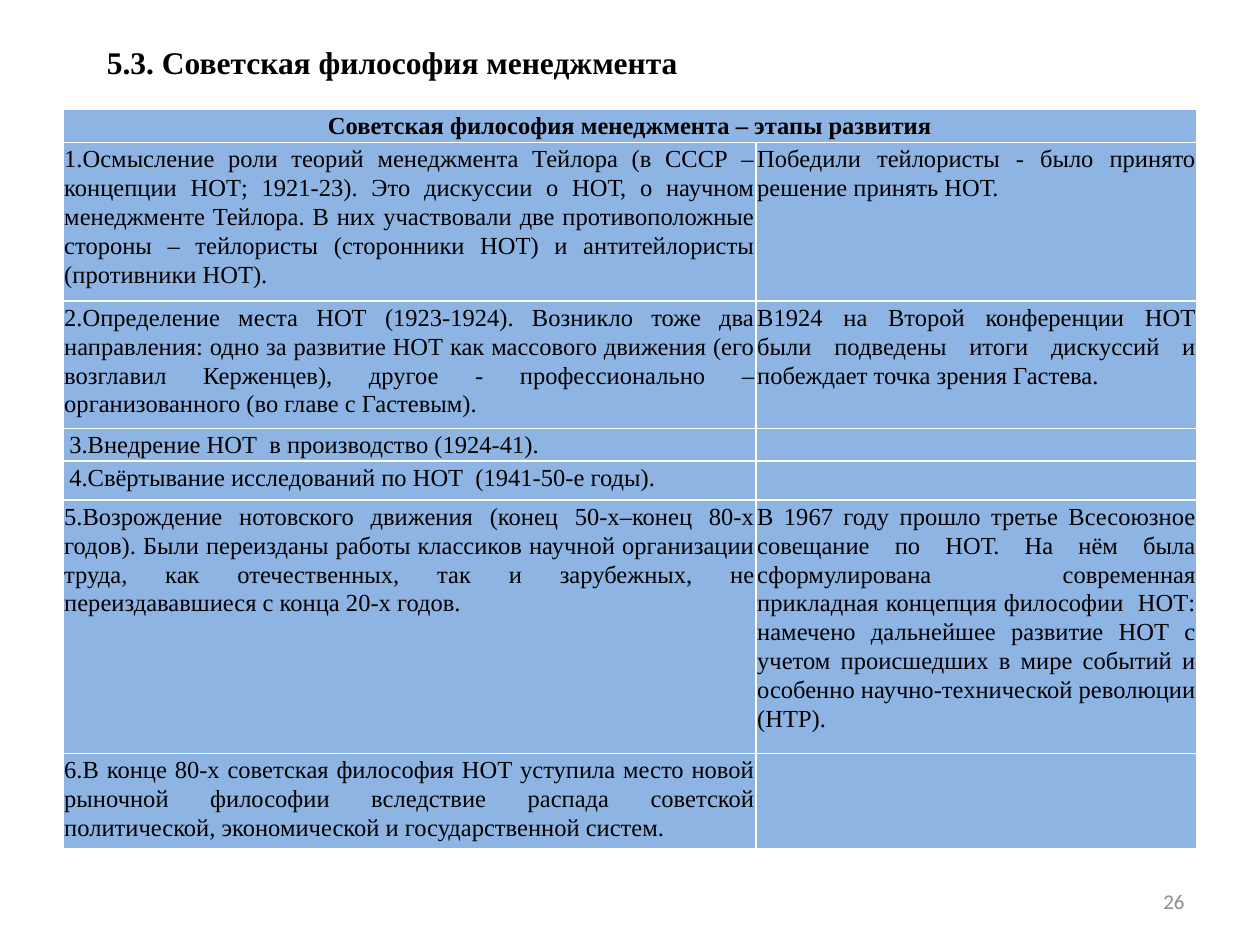
import dataclasses
import lxml.etree
import pptx
import pptx.dml.color
import pptx.enum.text
import pptx.oxml.ns
import pptx.util

ALIGN = pptx.enum.text.PP_ALIGN
ANCHOR = pptx.enum.text.MSO_ANCHOR
WIDE, HIGH = 10, 7.5
SERIF = "Times New Roman"
BLUE, WHITE, BLACK, GREY = "8EB4E3", "FFFFFF", "000000", "8C8C8C"
COLS = (0.55, 0.35)


@dataclasses.dataclass
class Style:
    """Look of one run of text."""
    size: float
    face: str = SERIF
    hue: str = BLACK
    bold: bool = False


@dataclasses.dataclass
class Stage:
    """One table row: its height, cell texts and alignment."""
    high: float
    left: str
    right: str = ""
    align: ALIGN = ALIGN.JUSTIFY
    pad: float = 0.01
    bold: bool = False


STAGES = (
    Stage(0.25, "Советская философия менеджмента – этапы развития",
          align=ALIGN.CENTER, pad=0.05, bold=True),
    Stage(1.26, "1.Осмысление роли теорий менеджмента Тейлора (в СССР – концепции НОТ; "
          "1921-23). Это дискуссии о НОТ, о научном менеджменте Тейлора. В них участвовали "
          "две противоположные стороны – тейлористы (сторонники НОТ) и антитейлористы "
          "(противники НОТ).",
          "Победили тейлористы - было принято решение принять НОТ."),
    Stage(1.01, "2.Определение места НОТ (1923-1924). Возникло тоже два направления: одно за "
          "развитие НОТ как массового движения (его возглавил Керженцев), другое - "
          "профессионально – организованного (во главе с Гастевым).",
          "В1924 на Второй конференции НОТ были подведены итоги дискуссий и побеждает точка "
          "зрения Гастева."),
    Stage(0.26, "3.Внедрение НОТ  в производство (1924-41).", align=ALIGN.LEFT, pad=0.05),
    Stage(0.31, "4.Свёртывание исследований по НОТ  (1941-50-е годы).",
          align=ALIGN.LEFT, pad=0.05),
    Stage(2.01, "5.Возрождение нотовского движения (конец 50-х–конец 80-х годов). Были "
          "переизданы работы классиков научной организации труда, как отечественных, так и "
          "зарубежных, не переиздававшиеся с конца 20-х годов.",
          "В 1967 году прошло третье Всесоюзное совещание по НОТ. На нём была сформулирована "
          "современная прикладная концепция философии  НОТ: намечено дальнейшее развитие НОТ "
          "с учетом происшедших в мире событий и особенно научно-технической революции (НТР)."),
    Stage(0.76, "6.В конце 80-х советская философия НОТ уступила место новой рыночной "
          "философии вследствие распада советской политической, экономической и "
          "государственной систем."),
)


def color(hue: str) -> pptx.dml.color.RGBColor:
    """Turn a hex string into a colour."""
    return pptx.dml.color.RGBColor.from_string(hue)


def write(para, text: str, style: Style, align: ALIGN) -> None:
    """Add one styled run to a paragraph."""
    para.alignment = align
    run = para.add_run()
    run.text = text
    run.font.size = pptx.util.Pt(style.size)
    run.font.name = style.face
    run.font.bold = style.bold
    run.font.color.rgb = color(style.hue)


def label(slide, box: tuple, text: str, style: Style, align: ALIGN, anchor: ANCHOR) -> None:
    """Place a text box given as shares of the slide."""
    left, top, wide, high = box
    shape = slide.shapes.add_textbox(
        pptx.util.Inches(left * WIDE), pptx.util.Inches(top * HIGH),
        pptx.util.Inches(wide * WIDE), pptx.util.Inches(high * HIGH))
    frame = shape.text_frame
    frame.word_wrap = True
    frame.vertical_anchor = anchor
    write(frame.paragraphs[0], text, style, align)


def border(cell) -> None:
    """Draw thin white lines on all sides of a cell."""
    props = cell._tc.get_or_add_tcPr()
    name = pptx.oxml.ns.qn
    for side in "LRTB":
        line = lxml.etree.SubElement(props, name(f"a:ln{side}"), w=str(pptx.util.Pt(1)))
        fill = lxml.etree.SubElement(line, name("a:solidFill"))
        lxml.etree.SubElement(fill, name("a:srgbClr"), val=WHITE)


def fill_cell(cell, text: str, stage: Stage) -> None:
    """Set the margins, lines, fill and text of a cell."""
    cell.margin_left = cell.margin_right = pptx.util.Inches(stage.pad)
    cell.margin_top = pptx.util.Inches(0.01)
    cell.margin_bottom = 0
    border(cell)
    cell.fill.solid()
    cell.fill.fore_color.rgb = color(BLUE)
    para = cell.text_frame.paragraphs[0]
    para.line_spacing = 1.07
    if text:
        write(para, text, Style(14, bold=stage.bold), stage.align)
    else:
        lxml.etree.SubElement(para._p, pptx.oxml.ns.qn("a:endParaRPr"), sz="1200")


def draw_table(slide) -> None:
    """Build the table of stages."""
    total = sum(stage.high for stage in STAGES)
    table = slide.shapes.add_table(
        len(STAGES), len(COLS), pptx.util.Inches(0.05 * WIDE), pptx.util.Inches(0.116 * HIGH),
        pptx.util.Inches(sum(COLS) * WIDE), pptx.util.Inches(total)).table
    for col, share in zip(table.columns, COLS):
        col.width = pptx.util.Inches(share * WIDE)
    for row, stage in zip(table.rows, STAGES):
        row.height = pptx.util.Inches(stage.high)
        for cell, text in zip(row.cells, (stage.left, stage.right)):
            fill_cell(cell, text, stage)
    table.cell(0, 0).merge(table.cell(0, 1))


def main() -> None:
    """Build and save the slide."""
    deck = pptx.Presentation()
    deck.slide_width = pptx.util.Inches(WIDE)
    deck.slide_height = pptx.util.Inches(HIGH)
    slide = deck.slides.add_slide(deck.slide_layouts[6])
    label(slide, (0.717, 0.927, 0.233, 0.053), "26", Style(12, "Calibri", GREY),
          ALIGN.RIGHT, ANCHOR.MIDDLE)
    label(slide, (0.075, 0.039, 0.906, 0.053), "5.3. Советская философия менеджмента",
          Style(18, bold=True), ALIGN.LEFT, ANCHOR.TOP)
    draw_table(slide)
    deck.save("out.pptx")


if __name__ == "__main__":
    main()
